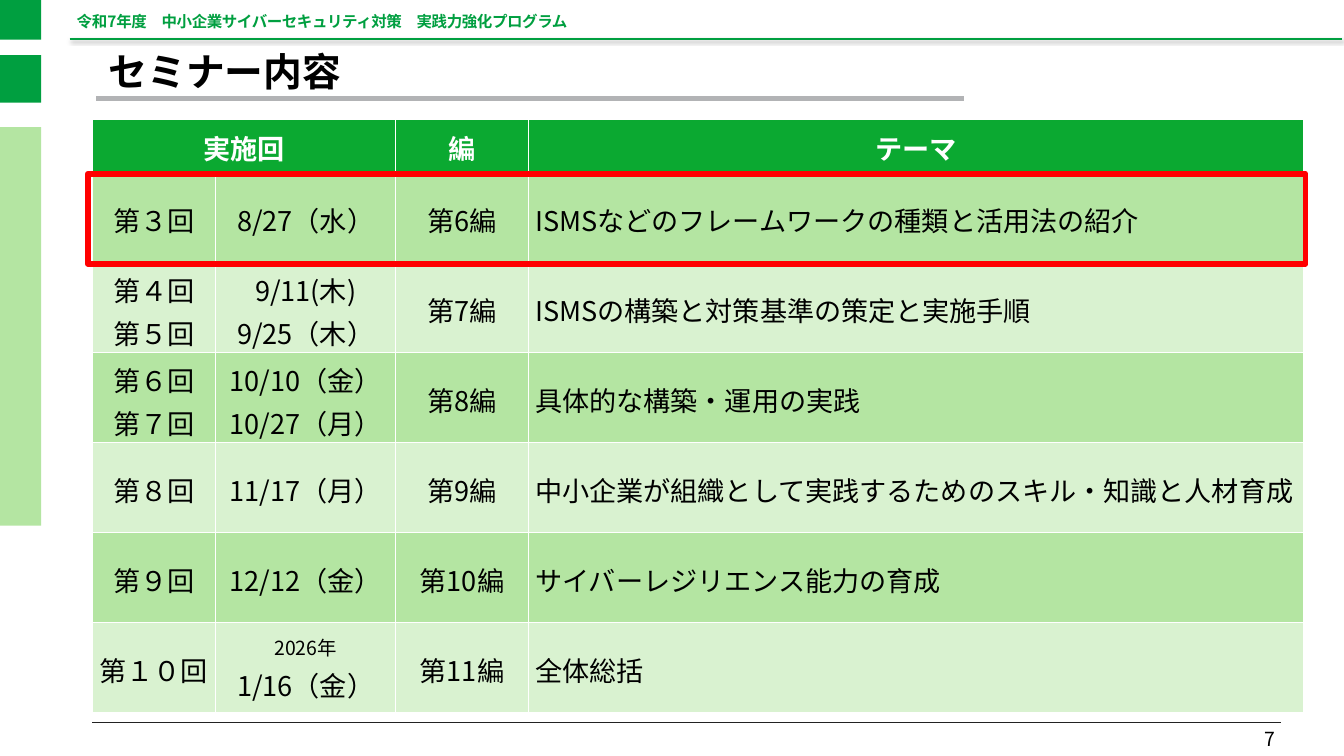
from dataclasses import dataclass

from lxml.etree import SubElement
from pptx import Presentation
from pptx.dml.color import RGBColor
from pptx.enum.shapes import MSO_CONNECTOR, MSO_SHAPE
from pptx.enum.text import MSO_ANCHOR, PP_ALIGN
from pptx.oxml.ns import qn
from pptx.util import Inches, Pt


@dataclass(frozen=True)
class Theme:
    font: str = "Noto Sans CJK JP"
    green: str = "009F40"
    head: str = "0BA931"
    mid: str = "B4E5A2"
    pale: str = "D9F2D0"
    gray: str = "B2B3B5"
    ink: str = "222222"
    black: str = "000000"
    white: str = "FFFFFF"
    red: str = "FF0000"
    title: int = 40
    body: int = 28
    small: int = 20
    note: int = 16


THEME = Theme()
WIDE, HIGH = Inches(19.26), Inches(10.83)
CENTER, LEFT, RIGHT = PP_ALIGN.CENTER, PP_ALIGN.LEFT, PP_ALIGN.RIGHT

# Session, date, part and theme; one line of text per paragraph
HEADS = ["実施回", "", "編", "テーマ"]
ROWS = [
    ["第３回", "8/27（水）", "第6編", "ISMSなどのフレームワークの種類と活用法の紹介"],
    ["第４回\n第５回", "9/11(木)\n9/25（木）", "第7編", "ISMSの構築と対策基準の策定と実施手順"],
    ["第６回\n第７回", "10/10（金）\n10/27（月）", "第8編", "具体的な構築・運用の実践"],
    ["第８回", "11/17（月）", "第9編", "中小企業が組織として実践するためのスキル・知識と人材育成"],
    ["第９回", "12/12（金）", "第10編", "サイバーレジリエンス能力の育成"],
    ["第１０回", "2026年\n1/16（金）", "第11編", "全体総括"],
]

# Shares of the slide in percent
COLS = [9.19, 13.4, 9.87, 57.68]
HEAD_ROW, BODY_ROW = 7.02, 11.91
TABLE_X, TABLE_Y = 6.85, 15.79


def across(share):
    return round(WIDE * share / 100)


def down(share):
    return round(HIGH * share / 100)


def place(x, y, w, h):
    return across(x), down(y), across(w), down(h)


def color(code):
    return RGBColor.from_string(code)


def write(frame, text, size=THEME.body, ink=THEME.black, bold=False,
          align=LEFT, lead=None, before=0, track=None, sizes=()):
    for i, line in enumerate(text.split("\n")):
        para = frame.add_paragraph() if i else frame.paragraphs[0]
        para.alignment, para.space_before = align, Pt(before)
        if lead:
            para.line_spacing = lead
        run = para.add_run()
        run.text = line
        font = run.font
        font.name, font.bold = THEME.font, bold
        font.size = Pt(sizes[i] if sizes else size)
        font.color.rgb = color(ink)
        props = run._r.get_or_add_rPr()
        SubElement(props, qn("a:ea"), typeface=THEME.font)
        if track:
            props.set("spc", str(track))


def label(slide, box, text, anchor=MSO_ANCHOR.TOP, inset=True, **style):
    frame = slide.shapes.add_textbox(*place(*box)).text_frame
    frame.word_wrap, frame.vertical_anchor = True, anchor
    if not inset:
        frame.margin_left = frame.margin_right = frame.margin_bottom = 0
        frame.margin_top = Inches(0.01)
    write(frame, text, **style)


def rule(slide, x, end, y, ink, width, shade=False):
    line = slide.shapes.add_connector(
        MSO_CONNECTOR.STRAIGHT, across(x), down(y), across(end), down(y))
    line.line.color.rgb, line.line.width = color(ink), Pt(width)
    effect = SubElement(line._element.spPr, qn("a:effectLst"))
    if shade:
        cast = SubElement(effect, qn("a:outerShdw"), blurRad=str(Pt(4)),
                          dist=str(Pt(3)), dir=str(45 * 60000))
        tint = SubElement(cast, qn("a:srgbClr"), val=THEME.black)
        SubElement(tint, qn("a:alpha"), val="40000")


def block(slide, box, fill=None, edge=None, width=0):
    shape = slide.shapes.add_shape(MSO_SHAPE.RECTANGLE, *place(*box))
    shape.shadow.inherit = False
    if fill:
        shape.fill.solid()
        shape.fill.fore_color.rgb = color(fill)
    else:
        shape.fill.background()
    if edge:
        shape.line.color.rgb, shape.line.width = color(edge), Pt(width)
    else:
        shape.line.fill.background()


def border(cell, low):
    props = cell._tc.get_or_add_tcPr()
    for side, width in zip("LRTB", (1, 1, 1, low)):
        line = SubElement(props, qn(f"a:ln{side}"), w=str(Pt(width)))
        fill = SubElement(line, qn("a:solidFill"))
        SubElement(fill, qn("a:srgbClr"), val=THEME.white)


def paint(cell, text, fill, low=1, **style):
    border(cell, low)
    cell.fill.solid()
    cell.fill.fore_color.rgb = color(fill)
    cell.vertical_anchor = MSO_ANCHOR.MIDDLE
    if text:
        write(cell.text_frame, text, lead=1.1, **style)


def plan(slide):
    tall = HEAD_ROW + BODY_ROW * len(ROWS)
    box = place(TABLE_X, TABLE_Y, sum(COLS), tall)
    table = slide.shapes.add_table(len(ROWS) + 1, len(COLS), *box).table
    for col, share in zip(table.columns, COLS):
        col.width = across(share)
    for i, row in enumerate(table.rows):
        row.height = down(BODY_ROW if i else HEAD_ROW)
    for j, text in enumerate(HEADS):
        paint(table.cell(0, j), text, THEME.head, low=3,
              ink=THEME.white, bold=True, align=CENTER)
    table.cell(0, 0).merge(table.cell(0, 1))
    for i, row in enumerate(ROWS, 1):
        fill = THEME.mid if i % 2 else THEME.pale
        for j, text in enumerate(row):
            sizes = (THEME.small, THEME.body) if text.startswith("2026年") else ()
            paint(table.cell(i, j), text, fill, sizes=sizes,
                  align=LEFT if j == 3 else CENTER)


def main():
    deck = Presentation()
    deck.slide_width, deck.slide_height = WIDE, HIGH
    slide = deck.slides.add_slide(deck.slide_layouts[6])

    # Rules and side blocks
    rule(slide, 5.19, 99.84, 5.17, THEME.green, 2, shade=True)
    rule(slide, TABLE_X, 95.33, 95.57, THEME.ink, 1)
    rule(slide, 7.17, 71.7, 13.02, THEME.gray, 6)
    for y, h, fill in [(0, 5.26, THEME.green), (7.29, 6.28, THEME.green),
                       (16.81, 52.72, THEME.mid)]:
        block(slide, (0, y, 3.06, h), fill=fill)

    # Program name, page number and title
    label(slide, (5.71, 2.03, 90.76, 2.03),
          "令和7年度　中小企業サイバーセキュリティ対策　実践力強化プログラム",
          inset=False, size=THEME.note, ink=THEME.green, bold=True,
          lead=Pt(15), track=-40)
    label(slide, (72.95, 94.37, 22.48, 5.36), "7", anchor=MSO_ANCHOR.BOTTOM,
          size=THEME.small, align=RIGHT)
    label(slide, (7.58, 7.02, 84.84, 5.63), "セミナー内容",
          anchor=MSO_ANCHOR.MIDDLE, size=THEME.title, bold=True,
          lead=0.9, before=10)

    # Seminar plan with the current session framed
    plan(slide)
    block(slide, (6.54, 22.99, 90.6, BODY_ROW), edge=THEME.red, width=6)

    deck.save("out.pptx")


if __name__ == "__main__":
    main()
